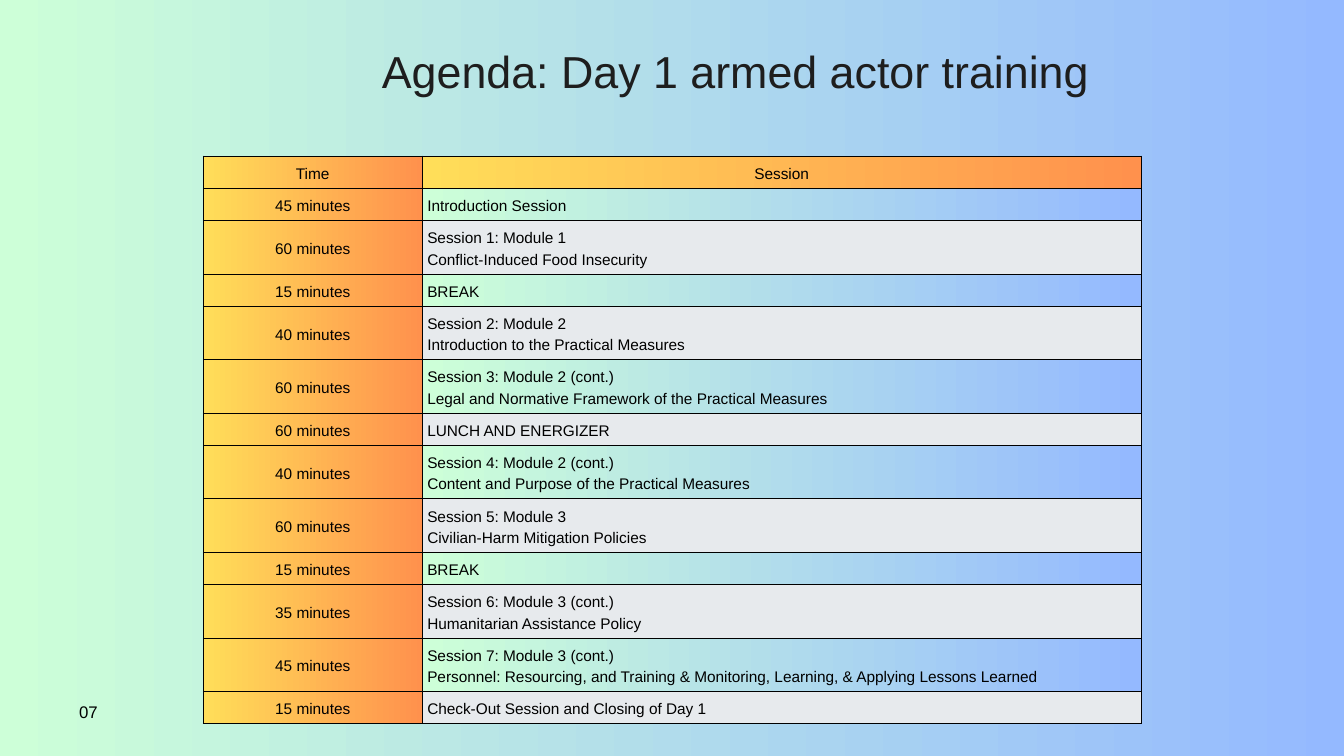
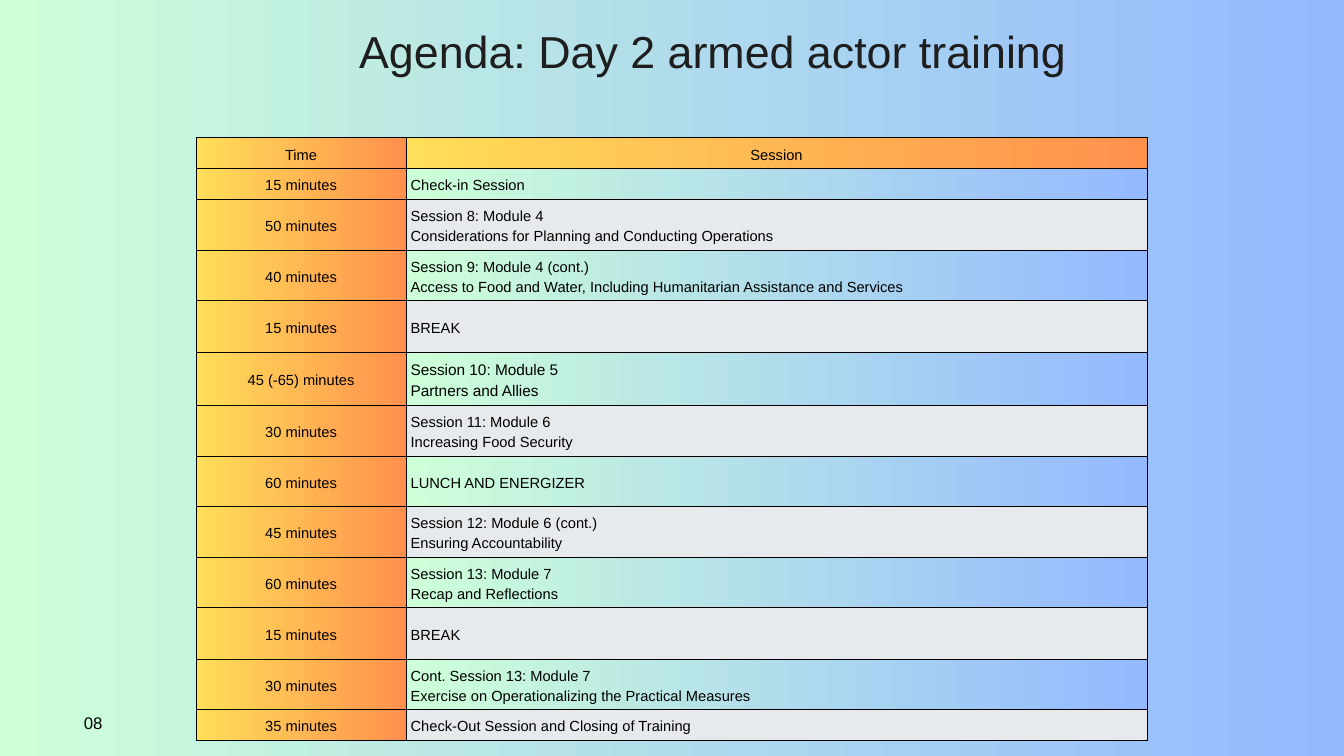
from lxml.etree import SubElement
from pptx import Presentation
from pptx.dml.color import RGBColor
from pptx.enum.text import MSO_ANCHOR, MSO_AUTO_SIZE, PP_ALIGN
from pptx.oxml.ns import qn
from pptx.util import Cm, Pt

# Shared style
FONT = "Arial"
BLACK = RGBColor(0x00, 0x00, 0x00)
TITLE_COLOR = RGBColor(0x1E, 0x1E, 0x1E)
GREY = RGBColor(0xE7, 0xEA, 0xED)
MINT_BLUE = (RGBColor(0xCD, 0xFF, 0xD8), RGBColor(0x94, 0xB9, 0xFF))
YELLOW_ORANGE = (RGBColor(0xFF, 0xDE, 0x59), RGBColor(0xFF, 0x91, 0x4D))
BORDER_PT = 0.37

# Agendas: time, then the lines of the session
DAY_1 = [
    ("45 minutes", "Introduction Session"),
    ("60 minutes", "Session 1: Module 1", "Conflict-Induced Food Insecurity"),
    ("15 minutes", "BREAK"),
    ("40 minutes", "Session 2: Module 2", "Introduction to the Practical Measures"),
    ("60 minutes", "Session 3: Module 2 (cont.)",
     "Legal and Normative Framework of the Practical Measures"),
    ("60 minutes", "LUNCH AND ENERGIZER"),
    ("40 minutes", "Session 4: Module 2 (cont.)",
     "Content and Purpose of the Practical Measures"),
    ("60 minutes", "Session 5: Module 3", "Civilian-Harm Mitigation Policies"),
    ("15 minutes", "BREAK"),
    ("35 minutes", "Session 6: Module 3 (cont.)", "Humanitarian Assistance Policy"),
    ("45 minutes", "Session 7: Module 3 (cont.)",
     "Personnel: Resourcing, and Training & Monitoring, Learning, "
     "& Applying Lessons Learned"),
    ("15 minutes", "Check-Out Session and Closing of Day 1"),
]
DAY_2 = [
    ("15 minutes", "Check-in Session"),
    ("50 minutes", "Session 8: Module 4",
     "Considerations for Planning and Conducting Operations"),
    ("40 minutes", "Session 9: Module 4 (cont.)",
     "Access to Food and Water, Including Humanitarian Assistance and Services"),
    ("15 minutes", "BREAK"),
    ("45 (-65) minutes", "Session 10: Module 5", "Partners and Allies"),
    ("30 minutes", "Session 11: Module 6", "Increasing Food Security"),
    ("60 minutes", "LUNCH AND ENERGIZER"),
    ("45 minutes", "Session 12: Module 6 (cont.)", "Ensuring Accountability"),
    ("60 minutes", "Session 13: Module 7", "Recap and Reflections"),
    ("15 minutes", "BREAK"),
    ("30 minutes", "Cont. Session 13: Module 7",
     "Exercise on Operationalizing the Practical Measures"),
    ("35 minutes", "Check-Out Session and Closing of Training"),
]


def write(tf, *lines, size, color=BLACK, align=PP_ALIGN.LEFT, spacing=None):
    """Fill a text frame, one paragraph a line."""
    for i, line in enumerate(lines):
        p = tf.add_paragraph() if i else tf.paragraphs[0]
        p.alignment = align
        if spacing:
            p.line_spacing = Pt(spacing)
        r = p.add_run()
        r.text = line
        r.font.name, r.font.size = FONT, Pt(size)
        r.font.color.rgb = color


def paint(fill, color):
    """Apply a solid colour, or a left-to-right gradient for a pair."""
    if isinstance(color, RGBColor):
        fill.solid()
        fill.fore_color.rgb = color
        return
    fill.gradient()
    fill.gradient_angle = 0
    for stop, rgb in zip(fill.gradient_stops, color):
        stop.color.rgb = rgb


def add_borders(cell):
    tcPr = cell._tc.get_or_add_tcPr()
    for side in ("a:lnL", "a:lnR", "a:lnT", "a:lnB"):
        ln = SubElement(tcPr, qn(side), w=str(Pt(BORDER_PT)))
        SubElement(SubElement(ln, qn("a:solidFill")), qn("a:srgbClr"), val=str(BLACK))


class Deck:
    def __init__(self):
        self.prs = Presentation()
        self.prs.slide_width, self.prs.slide_height = Cm(50.8), Cm(28.58)
        self.s = None

    def slide(self):
        self.s = self.prs.slides.add_slide(self.prs.slide_layouts[5])
        paint(self.s.background.fill, MINT_BLUE)

    def title(self, text, left, top):
        sp = self.s.shapes.title
        sp.left, sp.top, sp.width, sp.height = Cm(left), Cm(top), Cm(27.2), Cm(1.93)
        tf = sp.text_frame
        tf.margin_left = tf.margin_right = tf.margin_top = tf.margin_bottom = 0
        tf.vertical_anchor = MSO_ANCHOR.TOP
        tf.word_wrap, tf.auto_size = True, MSO_AUTO_SIZE.SHAPE_TO_FIT_TEXT
        write(tf, text, size=48, color=TITLE_COLOR, align=PP_ALIGN.CENTER, spacing=57.6)

    def page_number(self, text, left, top):
        tf = self.s.shapes.add_textbox(Cm(left), Cm(top), Cm(7.62), Cm(1.02)).text_frame
        tf.word_wrap, tf.auto_size = True, MSO_AUTO_SIZE.SHAPE_TO_FIT_TEXT
        write(tf, text, size=18)

    def cell(self, cell, lines, color, **text_format):
        cell.margin_left = cell.margin_right = Cm(0.18)
        cell.margin_top = cell.margin_bottom = Cm(0.18)
        cell.vertical_anchor = MSO_ANCHOR.MIDDLE
        add_borders(cell)
        paint(cell.fill, color)
        write(cell.text_frame, *lines, **text_format)

    def agenda(self, sessions, left, top, widths, line_heights, text_format,
               row_heights={}, row_formats={}):
        """Rows are as high as their line count asks, unless row_heights says otherwise."""
        rows = [("Time", "Session"), *sessions]
        heights = [row_heights.get(i, line_heights[len(row) - 2])
                   for i, row in enumerate(rows)]
        table = self.s.shapes.add_table(len(rows), 2, Cm(left), Cm(top),
                                        Cm(sum(widths)), Cm(sum(heights))).table
        table.first_row = table.horz_banding = False
        for column, width in zip(table.columns, widths):
            column.width = Cm(width)
        for i, (time, *lines) in enumerate(rows):
            table.rows[i].height = Cm(heights[i])
            self.cell(table.cell(i, 0), [time], YELLOW_ORANGE,
                      align=PP_ALIGN.CENTER, **text_format)
            # Session cells alternate below the header
            color = YELLOW_ORANGE if i == 0 else MINT_BLUE if i % 2 else GREY
            self.cell(table.cell(i, 1), lines, color,
                      align=PP_ALIGN.LEFT if i else PP_ALIGN.CENTER,
                      **row_formats.get(i, text_format))


def main():
    deck = Deck()
    regular = dict(size=16.5, spacing=22.8)
    compact = dict(size=15.7, spacing=21.7)

    # Day 1
    deck.slide()
    deck.agenda(DAY_1, 7.67, 5.89, (8.3, 27.15), (1.22, 2.02), regular)
    deck.title("Agenda: Day 1 armed actor training", 14.2, 1.65)
    deck.page_number("07", 2.74, 26.39)

    # Day 2
    deck.slide()
    deck.agenda(DAY_2, 7.42, 5.2, (7.92, 28.02), (1.17, 1.91), compact,
                row_heights={4: 1.96, 5: 2.01, 7: 1.91, 10: 1.96, 11: 1.8},
                row_formats={5: regular})
    deck.title("Agenda: Day 2 armed actor training", 13.34, 0.89)
    deck.page_number("08", 2.92, 26.82)

    deck.prs.save("out.pptx")


if __name__ == "__main__":
    main()
